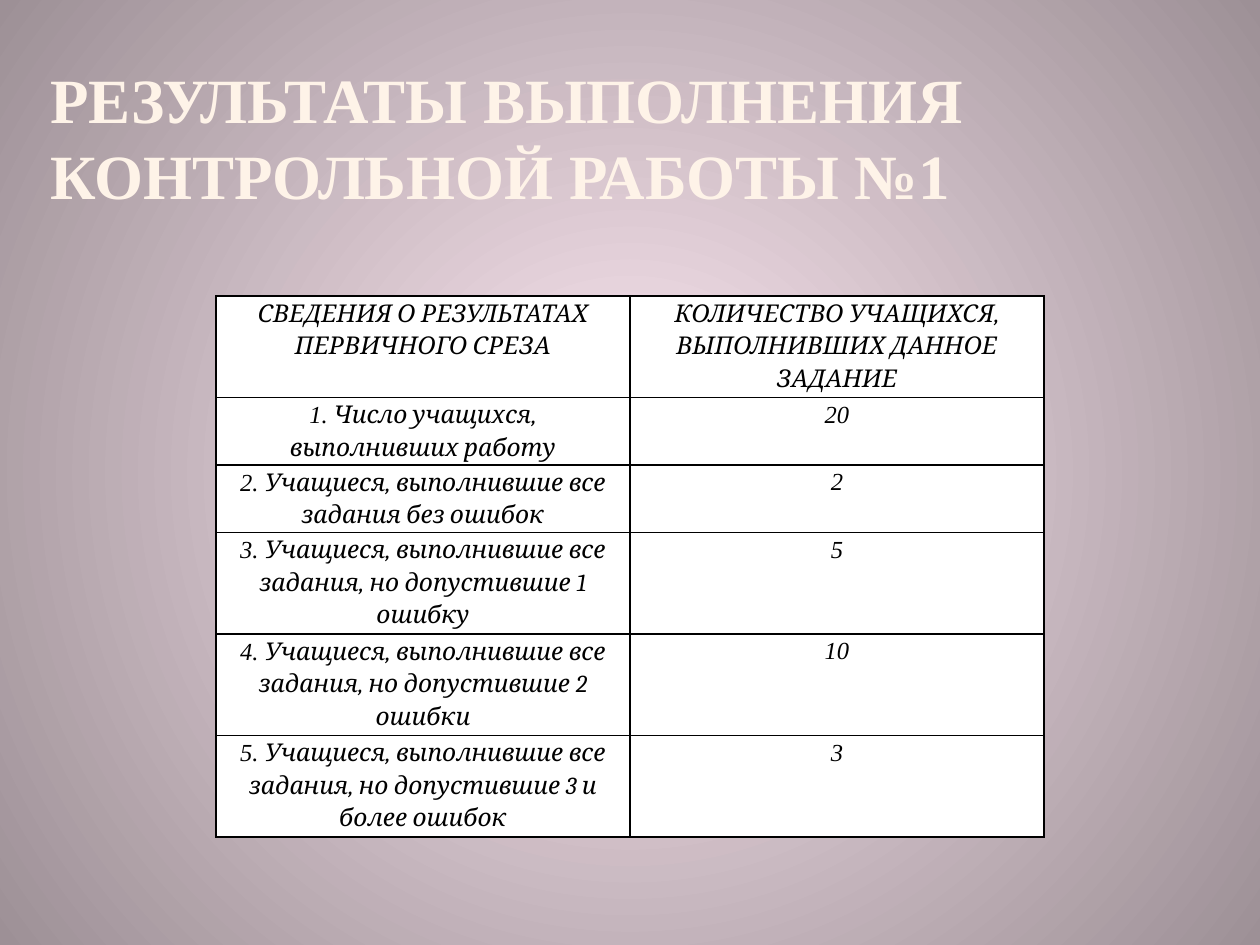
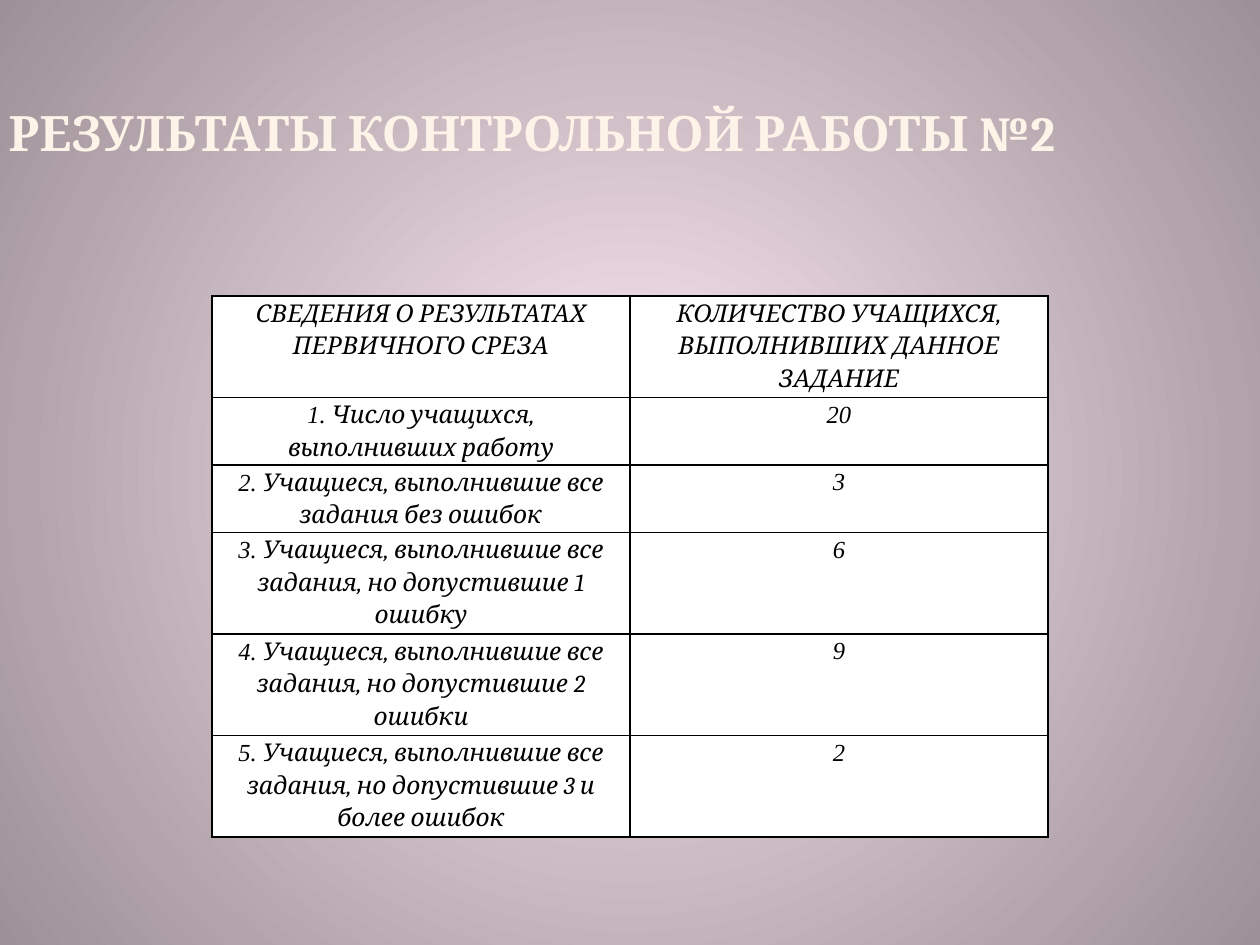
from dataclasses import dataclass
from pptx import Presentation
from pptx.dml.color import RGBColor
from pptx.enum.text import MSO_ANCHOR, PP_ALIGN
from pptx.oxml import parse_xml
from pptx.oxml.ns import nsdecls
from pptx.util import Pt


@dataclass(frozen=True)
class Theme:
    glow: str = "FCE7F1"
    edge: str = "9D9096"
    cream: str = "FEF3E8"
    ink: str = "000000"
    paper: str = "FFFFFF"
    times: str = "Times New Roman"
    serif: str = "Cambria"
    large: float = 36
    small: float = 27.9
    body: float = 14


THEME = Theme()
SCALE = 914400 / 126
WIDE, HIGH = 1260, 945
TOP = 296
LINE = 32
PAD = 9

HEADS = (
    "СВЕДЕНИЯ О РЕЗУЛЬТАТАХ ПЕРВИЧНОГО СРЕЗА",
    "КОЛИЧЕСТВО УЧАЩИХСЯ, ВЫПОЛНИВШИХ ДАННОЕ ЗАДАНИЕ",
)
ITEMS = (
    ("Число учащихся, выполнивших работу", 2),
    ("Учащиеся, выполнившие все задания без ошибок", 2),
    ("Учащиеся, выполнившие все задания, но допустившие 1 ошибку", 3),
    ("Учащиеся, выполнившие все задания, но допустившие 2 ошибки", 3),
    ("Учащиеся, выполнившие все задания, но допустившие 3 и более ошибок", 3),
)


def px(size):
    return round(size * SCALE)


def write(frame, text, font, size=THEME.body, color=THEME.ink, bold=False,
          italic=False, align=PP_ALIGN.CENTER, space=None):
    para = frame.paragraphs[0]
    para.alignment = align
    para.line_spacing = space
    run = para.add_run()
    run.text = text
    run.font.name = font
    run.font.size = Pt(size)
    run.font.bold = bold
    run.font.italic = italic
    run.font.color.rgb = RGBColor.from_string(color)


def paint(slide):
    slide.element.cSld.insert(0, parse_xml(
        f'<p:bg {nsdecls("p", "a")}><p:bgPr><a:gradFill rotWithShape="1"><a:gsLst>'
        f'<a:gs pos="0"><a:srgbClr val="{THEME.glow}"/></a:gs>'
        f'<a:gs pos="100000"><a:srgbClr val="{THEME.edge}"/></a:gs></a:gsLst>'
        '<a:path path="circle"><a:fillToRect l="50000" t="50000" r="50000" b="50000"/>'
        '</a:path></a:gradFill><a:effectLst/></p:bgPr></p:bg>'))


def title(slide, box, text, base, **style):
    frame = slide.shapes.add_textbox(*map(px, box)).text_frame
    frame.word_wrap = True
    frame.vertical_anchor = MSO_ANCHOR.BOTTOM
    frame.margin_left = frame.margin_right = px(6)
    frame.margin_top, frame.margin_bottom = 0, px(base)
    write(frame, text, color=THEME.cream, bold=True, **style)


def frame_cell(cell):
    cell.fill.solid()
    cell.fill.fore_color.rgb = RGBColor.from_string(THEME.paper)
    cell.margin_left = cell.margin_right = px(PAD)
    cell.margin_top = cell.margin_bottom = 0
    props = cell._tc.get_or_add_tcPr()
    for spot, side in enumerate("LRTB"):
        props.insert(spot, parse_xml(
            f'<a:ln{side} {nsdecls("a")} w="{Pt(1)}"><a:solidFill>'
            f'<a:srgbClr val="{THEME.ink}"/></a:solidFill></a:ln{side}>'))


def table(slide, left, wide, counts):
    lines = [3] + [size for _, size in ITEMS]
    grid = slide.shapes.add_table(
        len(lines), 2, px(left), px(TOP), px(2 * wide), px(LINE * sum(lines))).table
    grid.first_row = grid.horz_banding = False
    for col in grid.columns:
        col.width = px(wide)
    for row, size in zip(grid.rows, lines):
        row.height = px(LINE * size)
    for cell in grid.iter_cells():
        frame_cell(cell)

    def put(row, col, text, font):
        write(grid.cell(row, col).text_frame, text, font, italic=True, space=1.15)

    for col, head in enumerate(HEADS):
        put(0, col, head, THEME.serif)
    for row, ((label, _), count) in enumerate(zip(ITEMS, counts), 1):
        put(row, 0, f"{row}. ", THEME.times)
        put(row, 0, label, THEME.serif)
        put(row, 1, str(count), THEME.times)


def main():
    deck = Presentation()
    deck.slide_width, deck.slide_height = px(WIDE), px(HIGH)
    first, second = (deck.slides.add_slide(deck.slide_layouts[6]) for _ in range(2))
    for slide in (first, second):
        paint(slide)
    title(first, (44, 86, 1153, 198), "РЕЗУЛЬТАТЫ ВЫПОЛНЕНИЯ КОНТРОЛЬНОЙ РАБОТЫ №1",
          72, font=THEME.times, size=THEME.large, align=PP_ALIGN.LEFT)
    table(first, 216, 414, (20, 2, 5, 10, 3))
    title(second, (-2, 26, 1068, 189), "РЕЗУЛЬТАТЫ КОНТРОЛЬНОЙ РАБОТЫ №2",
          54, font=THEME.serif, size=THEME.small)
    table(second, 212, 418, (20, 3, 6, 9, 2))
    deck.save("out.pptx")


if __name__ == "__main__":
    main()
